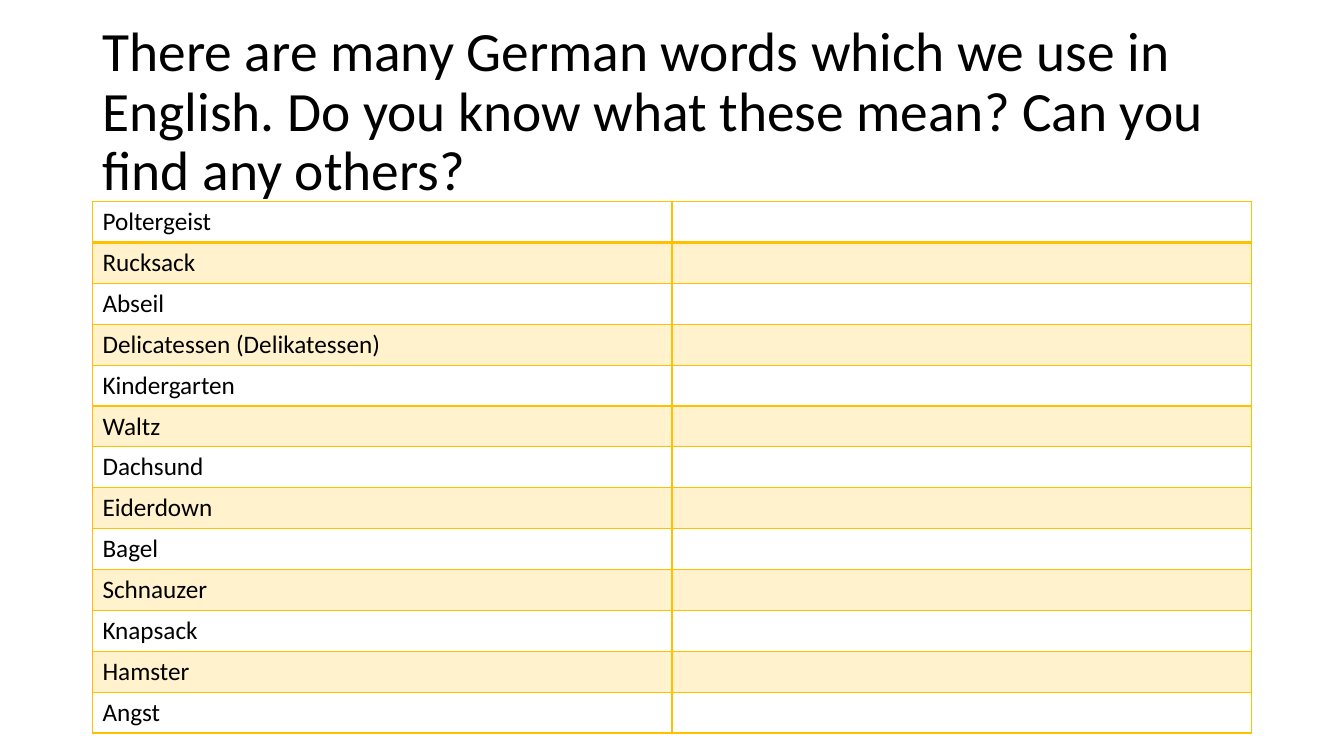
from lxml.etree import SubElement
from pptx import Presentation
from pptx.dml.color import RGBColor
from pptx.enum.text import MSO_ANCHOR, MSO_AUTO_SIZE, PP_ALIGN
from pptx.oxml.ns import qn
from pptx.util import Cm, Pt

BLACK = RGBColor(0x00, 0x00, 0x00)
GOLD = RGBColor(0xFF, 0xC0, 0x00)

TITLE = ("There are many German words which we use in English. "
         "Do you know what these mean? Can you find any others?")
WORDS = ["Poltergeist", "Rucksack", "Abseil", "Delicatessen (Delikatessen)",
         "Kindergarten", "Waltz", "Dachsund", "Eiderdown", "Bagel",
         "Schnauzer", "Knapsack", "Hamster", "Angst"]

LEFT, WIDTH = Cm(2.33), Cm(29.21)
ROW_HEIGHT = Cm(1.03)


class WordSlide:
    """Holds the style and the current slide."""

    title_format = {"name": "Calibri", "size": Pt(39.6)}
    cell_format = {"name": "Calibri", "size": Pt(18), "bold": False}
    thin, thick = Pt(1), Pt(2)
    band_opacity = 20

    def __init__(self, deck):
        self.page = deck.slides.add_slide(deck.slide_layouts[5])

    def add_text(self, para, text, font_format):
        span = para.add_run()
        span.text = text
        for key, value in font_format.items():
            setattr(span.font, key, value)
        span.font.color.rgb = BLACK

    def title(self, text, left, top, width, height):
        box = self.page.shapes.title
        place = {"left": left, "top": top, "width": width, "height": height}
        for key, value in place.items():
            setattr(box, key, value)
        frame = box.text_frame
        frame_format = {"word_wrap": True, "auto_size": MSO_AUTO_SIZE.NONE,
                        "vertical_anchor": MSO_ANCHOR.MIDDLE}
        for key, value in frame_format.items():
            setattr(frame, key, value)
        para = frame.paragraphs[0]
        para.alignment = PP_ALIGN.LEFT
        para.line_spacing = 0.9
        self.add_text(para, text, self.title_format)

    def borders(self, cell, widths):
        properties = cell._tc.get_or_add_tcPr()
        for side, width in widths.items():
            line = SubElement(properties, qn(f"a:ln{side}"), w=str(width))
            fill = SubElement(line, qn("a:solidFill"))
            SubElement(fill, qn("a:srgbClr"), val=str(GOLD))

    def band(self, cell):
        cell.fill.solid()
        cell.fill.fore_color.rgb = GOLD
        color = cell._tc.tcPr.find(f"{qn('a:solidFill')}/{qn('a:srgbClr')}")
        SubElement(color, qn("a:alpha"), val=str(self.band_opacity * 1000))

    def word_table(self, words, left, top, width, row_height):
        table = self.page.shapes.add_table(
            len(words), 2, left, top, width, row_height * len(words)).table
        table.first_row = table.horz_banding = False
        for index, word in enumerate(words):
            table.rows[index].height = row_height
            # The line below the first row is heavier
            widths = {"L": self.thin, "R": self.thin,
                      "T": self.thick if index == 1 else self.thin,
                      "B": self.thick if index == 0 else self.thin}
            for cell in table.rows[index].cells:
                self.borders(cell, widths)
                if index % 2:
                    self.band(cell)
                else:
                    cell.fill.background()
            self.add_text(table.cell(index, 0).text_frame.paragraphs[0],
                          word, self.cell_format)


def main():
    deck = Presentation()
    deck.slide_width, deck.slide_height = Cm(33.87), Cm(19.05)
    slide = WordSlide(deck)

    # Question
    slide.title(TITLE, LEFT, Cm(1.01), WIDTH, Cm(3.68))

    # Words, with an empty column for the meanings
    slide.word_table(WORDS, LEFT, Cm(5.08), WIDTH, ROW_HEIGHT)

    deck.save("out.pptx")


if __name__ == "__main__":
    main()
